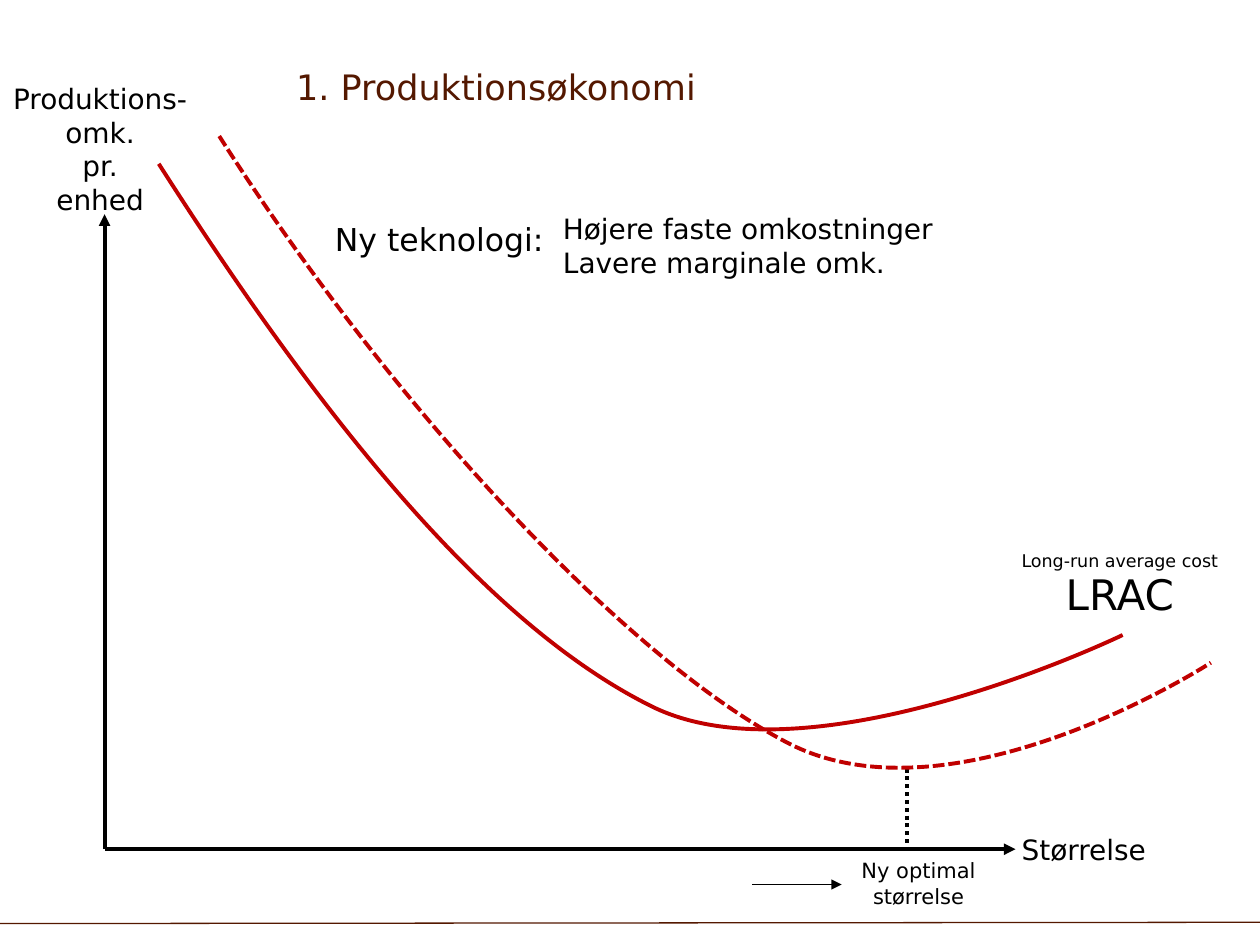
"""Build the production economics slide with long-run average cost curves."""
from dataclasses import dataclass
from typing import Optional

import pptx
import pptx.dml.color
import pptx.enum.dml
import pptx.enum.shapes
import pptx.enum.text
import pptx.oxml
import pptx.oxml.ns
import pptx.util

COLUMNS, ROWS = 100, 75
CELL = pptx.util.Inches(10) // COLUMNS
FONT = "DejaVu Sans"
BROWN, BLACK, RED = "541800", "000000", "C00000"
DASH = pptx.enum.dml.MSO_LINE.SQUARE_DOT
DOT = pptx.enum.dml.MSO_LINE.ROUND_DOT
Point = tuple[float, float]


@dataclass(frozen=True)
class Label:
    text: str
    column: float
    row: float
    columns: float
    rows: float
    size: int
    centred: bool = False


@dataclass(frozen=True)
class Stroke:
    start: Point
    end: Point
    width: float
    colour: str = BLACK
    arrow: bool = False
    dash: Optional[pptx.enum.dml.MSO_LINE] = None


@dataclass(frozen=True)
class CostCurve:
    points: tuple[Point, ...]
    rows: float
    dash: Optional[pptx.enum.dml.MSO_LINE] = None


ORIGIN = (8.3, 67.4)
STROKES = (
    Stroke((100, 73.2), (0, 73.3), 0.75, BROWN),
    Stroke(ORIGIN, (8.3, 17), 2.25, arrow=True),
    Stroke(ORIGIN, (80.6, 67.4), 2.25, arrow=True),
    Stroke((72, 61), (72, 67.4), 2.25, dash=DOT),
    Stroke((59.7, 70.2), (66.8, 70.2), 1, arrow=True),
)
CURVES = (
    CostCurve(((12.6, 13), (26, 34), (39, 49.8), (51.8, 56.1),
               (64.5, 62.3), (89.1, 50.4), (89.1, 50.4)), 44.9),
    CostCurve(((17.4, 10.8), (30.8, 31.8), (49.3, 52), (62.4, 58.9),
               (75.6, 65.9), (96.1, 52.6), (96.1, 52.6)), 50.1, DASH),
)
LABELS = (
    Label("LRAC", 83.6, 44.6, 10.9, 5, 24),
    Label("Long-run average cost", 80.1, 43.2, 18, 2.7, 10),
    Label("Størrelse", 80.1, 65.6, 12.2, 3.7, 16),
    Label("Ny optimal\nstørrelse", 67.3, 67.6, 11.2, 5, 12, True),
    Label("Produktions-\nomk.\npr.\nenhed", -0.2, 6, 16.3, 11.8, 16, True),
    Label("Ny teknologi:", 25.6, 17, 20, 4, 18),
    Label("Højere faste omkostninger\nLavere marginale omk.",
          43.7, 16.3, 32, 6.4, 16),
)


def cells(count: float) -> int:
    """Return the length of a number of grid cells."""
    return round(count * CELL)


def rgb(colour: str) -> pptx.dml.color.RGBColor:
    """Turn a hex string into a colour."""
    return pptx.dml.color.RGBColor.from_string(colour)


def place(shape, column: float, row: float, columns: float, rows: float) -> None:
    """Move and size a shape on the grid."""
    shape.left, shape.top = cells(column), cells(row)
    shape.width, shape.height = cells(columns), cells(rows)


def style_text(para, size: int, colour: str) -> None:
    """Format every run of a paragraph."""
    for span in para.runs:
        span.font.name = FONT
        span.font.size = pptx.util.Pt(size)
        span.font.color.rgb = rgb(colour)


def style_line(line, colour: str, width: float, dash) -> None:
    """Set colour, width and dash of a line."""
    line.color.rgb = rgb(colour)
    line.width = pptx.util.Pt(width)
    if dash is not None:
        line.dash_style = dash


def add_title(page, text: str) -> None:
    """Fill and format the title placeholder."""
    title = page.shapes.title
    place(title, 23.5, 4, 64.1, 6)
    frame = title.text_frame
    frame.text = text
    frame.word_wrap = True
    frame.auto_size = pptx.enum.text.MSO_AUTO_SIZE.NONE
    frame.vertical_anchor = pptx.enum.text.MSO_ANCHOR.MIDDLE
    frame.margin_left = frame.margin_right = 0
    frame.margin_top = frame.margin_bottom = 0
    para = frame.paragraphs[0]
    para.alignment = pptx.enum.text.PP_ALIGN.LEFT
    para.line_spacing = 0.97
    style_text(para, 20, BROWN)


def add_stroke(page, stroke: Stroke) -> None:
    """Draw a straight line, with an arrowhead at its end if asked."""
    line = page.shapes.add_connector(
        pptx.enum.shapes.MSO_CONNECTOR.STRAIGHT,
        *map(cells, stroke.start + stroke.end))
    style_line(line.line, stroke.colour, stroke.width, stroke.dash)
    if stroke.arrow:
        head = pptx.oxml.ns.qn("a:tailEnd")
        line.line._get_or_add_ln().append(
            pptx.oxml.parse_xml(f'<a:tailEnd {pptx.oxml.ns.nsdecls("a")} type="triangle"/>')
            if line._element.find(f".//{head}") is None else line._element.find(f".//{head}"))
    line._element.spPr.append(
        pptx.oxml.parse_xml(f'<a:effectLst {pptx.oxml.ns.nsdecls("a")}/>'))


def add_curve(page, curve: CostCurve) -> None:
    """Draw a smooth curve whose points are Bezier knots and handles."""
    knots = [(cells(column), cells(row)) for column, row in curve.points]
    builder = page.shapes.build_freeform(*knots[0], scale=1.0)
    builder.add_line_segments(knots[1:], close=False)
    shape = builder.convert_to_shape()
    outline = shape._element.find(f".//{pptx.oxml.ns.qn('a:path')}")
    segments = outline.findall(pptx.oxml.ns.qn("a:lnTo"))
    for first in range(0, len(segments), 3):
        bezier = pptx.oxml.parse_xml(
            f'<a:cubicBezTo {pptx.oxml.ns.nsdecls("a")}/>')
        for segment in segments[first:first + 3]:
            bezier.append(segment[0])
            outline.remove(segment)
        outline.append(bezier)
    shape.height = cells(curve.rows)
    outline.set("h", str(shape.height))
    shape.fill.background()
    shape.shadow.inherit = False
    style_line(shape.line, RED, 2.25, curve.dash)


def add_label(page, label: Label) -> None:
    """Write a label in an unwrapped text box."""
    box = page.shapes.add_textbox(0, 0, 0, 0)
    place(box, label.column, label.row, label.columns, label.rows)
    frame = box.text_frame
    frame.text = label.text
    frame.word_wrap = False
    frame.auto_size = pptx.enum.text.MSO_AUTO_SIZE.SHAPE_TO_FIT_TEXT
    align = pptx.enum.text.PP_ALIGN
    for para in frame.paragraphs:
        para.alignment = align.CENTER if label.centred else align.LEFT
        style_text(para, label.size, BLACK)


def main() -> None:
    """Build and save the deck."""
    deck = pptx.Presentation()
    deck.slide_width, deck.slide_height = cells(COLUMNS), cells(ROWS)
    page = deck.slides.add_slide(deck.slide_layouts[5])
    add_title(page, "1. Produktionsøkonomi")
    for stroke in STROKES:
        add_stroke(page, stroke)
    for curve in CURVES:
        add_curve(page, curve)
    for label in LABELS:
        add_label(page, label)
    deck.save("out.pptx")


if __name__ == "__main__":
    main()
